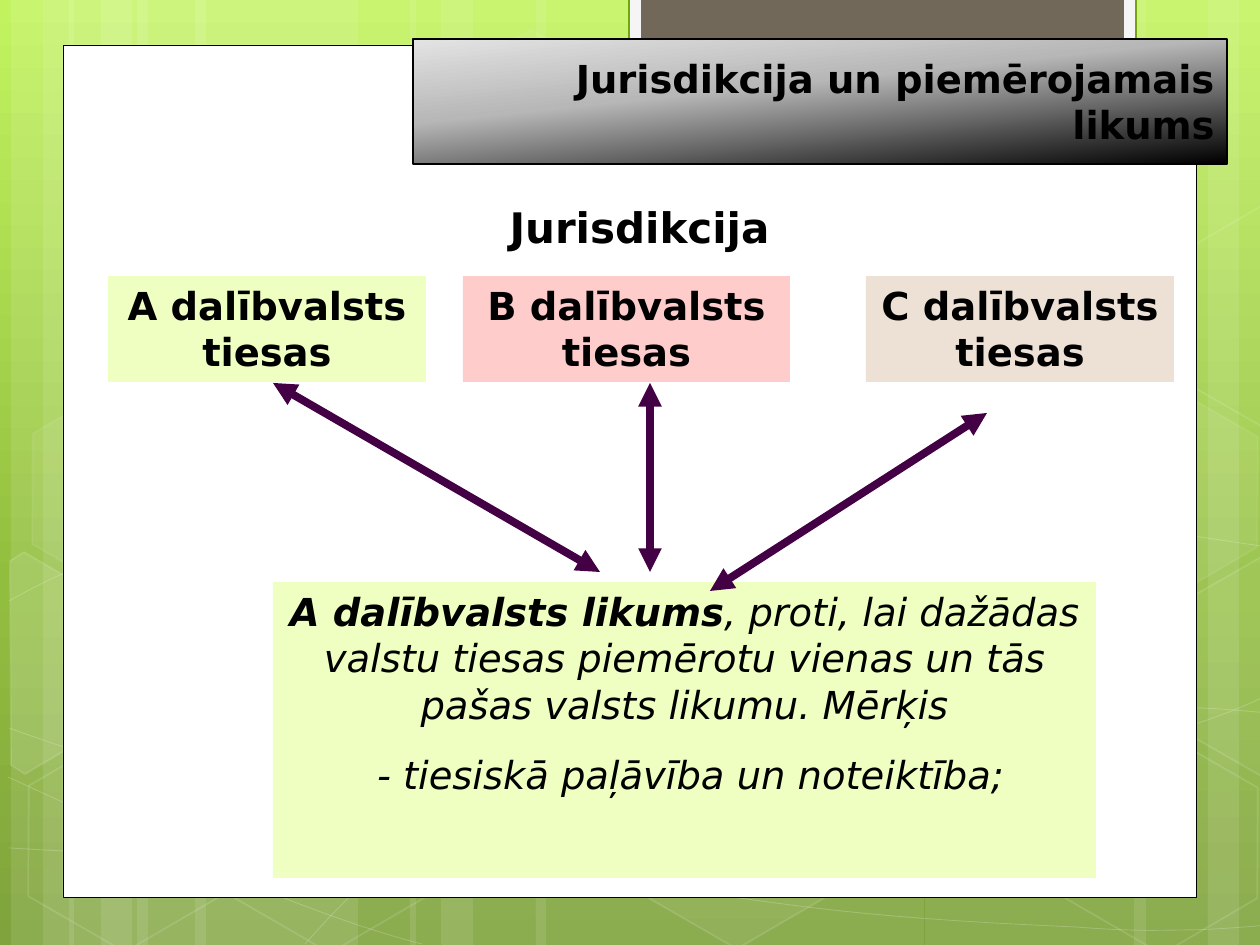
from typing import NamedTuple

from lxml.etree import SubElement
from pptx import Presentation
from pptx.dml.color import RGBColor
from pptx.enum.shapes import MSO_CONNECTOR, MSO_SHAPE
from pptx.enum.text import MSO_ANCHOR, PP_ALIGN
from pptx.oxml.ns import qn
from pptx.util import Emu, Pt

SCALE = 914400 / 126
FONT = "DejaVu Sans"
COLORS = {
    "white": "FFFFFF", "black": "000000", "tab": "F5F5F5", "tab_edge": "74A510",
    "tab_core": "71685A", "lime": "EFFFC1", "pink": "FFCCCC", "beige": "EDE1D6",
    "arrow": "440044",
}
BACKGROUND_STOPS = {0: "C2F35F", 62: "92BE3F", 100: "80A33D"}
TITLE_STOPS = {0: "E3E3E3", 40: "B7B7B7", 100: "000000"}


class Box(NamedTuple):
    x: int
    y: int
    w: int
    h: int


class Hexagon(NamedTuple):
    x: int
    y: int
    fill_alpha: int
    line_alpha: int


class Polygon(NamedTuple):
    points: list
    fill_alpha: int


class Court(NamedTuple):
    label: str
    box: Box
    color: str


class Arrow(NamedTuple):
    start: tuple
    end: tuple


STRIPS = [(137, 221), (11, 63), (43, 105), (195, 221), (69, 63), (101, 105),
          (925, 221), (1208, 63), (1134, 105), (536, 388), (410, 63), (441, 105)]
CURVES = [
    [(9, 848), (77, 852), (145, 856), (239, 854), (334, 853), (451, 851), (577, 838),
     (703, 825), (882, 801), (998, 777), (1113, 753), (1231, 716), (1269, 694)],
    [(9, 601), (45, 581), (82, 562), (152, 543), (224, 524), (326, 496), (437, 488),
     (549, 479), (685, 478), (824, 488), (963, 498), (1193, 537), (1269, 547)],
    [(8, 777), (160, 847), (311, 916), (422, 944)],
    [(9, 728), (48, 742), (88, 756), (161, 776), (234, 795), (344, 827), (450, 848),
     (554, 869), (687, 892), (791, 905), (896, 919), (1008, 924), (1075, 927),
     (1142, 932), (1158, 930), (1191, 930), (1223, 929), (1246, 927), (1269, 925)],
    [(305, 944), (328, 919), (350, 893), (381, 871), (411, 847), (454, 823), (489, 805),
     (524, 788), (546, 780), (591, 767), (638, 755), (722, 737), (766, 728),
     (811, 719), (818, 719), (857, 717), (896, 713), (958, 709), (1000, 708),
     (1045, 707), (1116, 708), (1201, 708), (1223, 709), (1245, 711), (1268, 713)],
]
HEXAGONS = [
    Hexagon(421, 45, 4, 8), Hexagon(626, 742, 6, 12), Hexagon(14, 745, 0, 12),
    Hexagon(18, 393, 7, 8), Hexagon(219, 746, 0, 12), Hexagon(949, 571, 10, 12),
    Hexagon(1051, 747, 0, 12), Hexagon(1051, 396, 7, 8),
]
POLYGONS = [
    Polygon([(10, 561), (24, 552), (121, 609), (120, 718), (25, 774), (11, 765)], 10),
    Polygon([(1167, 611), (1263, 556), (1271, 562), (1271, 772), (1263, 777), (1167, 722)], 4),
    Polygon([(1167, 261), (1263, 205), (1273, 212), (1271, 422), (1263, 427), (1167, 372)], 0),
]
COURTS = [
    Court("A dalībvalsts tiesas", Box(108, 276, 318, 106), "lime"),
    Court("B dalībvalsts tiesas", Box(463, 276, 327, 106), "pink"),
    Court("C dalībvalsts tiesas", Box(866, 276, 308, 106), "beige"),
]
ARROWS = [
    Arrow((273, 383), (600, 572)),
    Arrow((987, 413), (710, 591)),
    Arrow((650, 383), (650, 572)),
]


def px(value: int) -> Emu:
    return Emu(round(value * SCALE))


def rgb(name: str) -> RGBColor:
    return RGBColor.from_string(COLORS[name])


def set_alpha(parent, alpha: int) -> None:
    for color in parent.xpath("./a:solidFill/a:srgbClr"):
        SubElement(color, qn("a:alpha"), val=str(alpha * 1000))


def set_gradient(fill, owner, stops: dict, angle: int) -> None:
    fill.gradient()
    fill.gradient_angle = 360 - angle
    stop_list = owner.xpath(".//a:gsLst")[0]
    for old in list(stop_list):
        stop_list.remove(old)
    for position, color in stops.items():
        stop = SubElement(stop_list, qn("a:gs"), pos=str(position * 1000))
        SubElement(stop, qn("a:srgbClr"), val=color)


def style(shape, fill=None, fill_alpha=100, line=None, width=1.0, line_alpha=100):
    shape.shadow.inherit = False
    properties = shape.element.spPr
    if fill and fill_alpha:
        shape.fill.solid()
        shape.fill.fore_color.rgb = rgb(fill)
        if fill_alpha < 100:
            set_alpha(properties, fill_alpha)
    else:
        shape.fill.background()
    if line:
        shape.line.color.rgb = rgb(line)
        shape.line.width = Pt(width)
        if line_alpha < 100:
            set_alpha(properties.xpath("./a:ln")[0], line_alpha)
    else:
        shape.line.fill.background()
    return shape


def add_box(slide, box: Box, kind=MSO_SHAPE.RECTANGLE, **look):
    return style(slide.shapes.add_shape(kind, *map(px, box)), **look)


def add_outline(slide, points: list, closed: bool, **look):
    builder = slide.shapes.build_freeform(*points[0], scale=SCALE)
    builder.add_line_segments(points[1:], close=closed)
    return style(builder.convert_to_shape(), **look)


def add_curve(slide, knots: list, **look):
    curve = add_outline(slide, knots, False, **look)
    outline = curve.element.xpath(".//a:path")[0]
    segments = outline.xpath("./a:lnTo")
    for i in range(0, len(segments), 3):
        bezier = SubElement(outline, qn("a:cubicBezTo"))
        for segment in segments[i:i + 3]:
            bezier.append(segment[0])
            outline.remove(segment)
    return curve


def write_text(shape, paragraphs: list, size=22, italic=False, align=PP_ALIGN.CENTER,
               anchor=MSO_ANCHOR.TOP, space_before=13.8) -> None:
    frame = shape.text_frame
    frame.word_wrap = True
    frame.vertical_anchor = anchor
    for i, pieces in enumerate(paragraphs):
        paragraph = frame.add_paragraph() if i else frame.paragraphs[0]
        paragraph.alignment = align
        paragraph.space_before = Pt(space_before)
        for text, bold in pieces:
            run = paragraph.add_run()
            run.text = text
            font = run.font
            font.name, font.size, font.bold, font.italic = FONT, Pt(size), bold, italic
            font.color.rgb = rgb("black")


def add_arrow(slide, arrow: Arrow) -> None:
    connector = slide.shapes.add_connector(
        MSO_CONNECTOR.STRAIGHT, *map(px, arrow.start + arrow.end))
    connector.line.color.rgb = rgb("arrow")
    connector.line.width = Pt(4.5)
    properties = connector.element.spPr
    for tip in ("a:headEnd", "a:tailEnd"):
        SubElement(properties.xpath("./a:ln")[0], qn(tip), type="triangle")
    SubElement(properties, qn("a:effectLst"))


def draw_backdrop(slide) -> None:
    set_gradient(slide.background.fill, slide.element, BACKGROUND_STOPS, 90)
    for x, width in STRIPS:
        add_box(slide, Box(x, 0, width, 945), fill="white", fill_alpha=10)
    for knots in CURVES:
        add_curve(slide, knots, line="white", width=0.5, line_alpha=20)
    for cell in HEXAGONS:
        hexagon = add_box(slide, Box(cell.x, cell.y, 221, 192), MSO_SHAPE.HEXAGON,
                          fill="white", fill_alpha=cell.fill_alpha,
                          line="white", line_alpha=cell.line_alpha)
        hexagon.adjustments[0] = 0.285
        hexagon.rotation = 30
    for polygon in POLYGONS:
        add_outline(slide, polygon.points, True, fill="white",
                    fill_alpha=polygon.fill_alpha, line="white", line_alpha=12)
    add_box(slide, Box(63, 45, 1134, 853), fill="white", line="black", width=0.5)
    add_box(slide, Box(629, -2, 507, 97), fill="tab", line="tab_edge", width=1.25)
    add_box(slide, Box(641, -2, 483, 86), fill="tab_core")


def draw_content(slide) -> None:
    title = add_box(slide, Box(413, 39, 814, 125), line="black", width=0.75)
    set_gradient(title.fill, title.element, TITLE_STOPS, 84)
    write_text(title, [[("Jurisdikcija un piemērojamais likums", True)]],
               align=PP_ALIGN.RIGHT, anchor=MSO_ANCHOR.MIDDLE, space_before=0)
    heading = slide.shapes.add_textbox(*map(px, Box(64, 195, 1151, 63)))
    write_text(heading, [[("Jurisdikcija", True)]], size=24, space_before=15)
    for court in COURTS:
        court_box = add_box(slide, court.box, fill=court.color)
        write_text(court_box, [[(court.label, True)]])
    law = add_box(slide, Box(273, 582, 823, 296), fill="lime")
    write_text(law, [
        [("A dalībvalsts likums", True),
         (", proti, lai dažādas valstu tiesas piemērotu vienas un tās pašas valsts "
          "likumu. Mērķis", False)],
        [(" - tiesiskā paļāvība un noteiktība;", False)],
    ], italic=True)
    for arrow in ARROWS:
        add_arrow(slide, arrow)


def main() -> None:
    deck = Presentation()
    deck.slide_width, deck.slide_height = px(1260), px(945)
    slide = deck.slides.add_slide(deck.slide_layouts[6])
    draw_backdrop(slide)
    draw_content(slide)
    deck.save("out.pptx")


if __name__ == "__main__":
    main()
